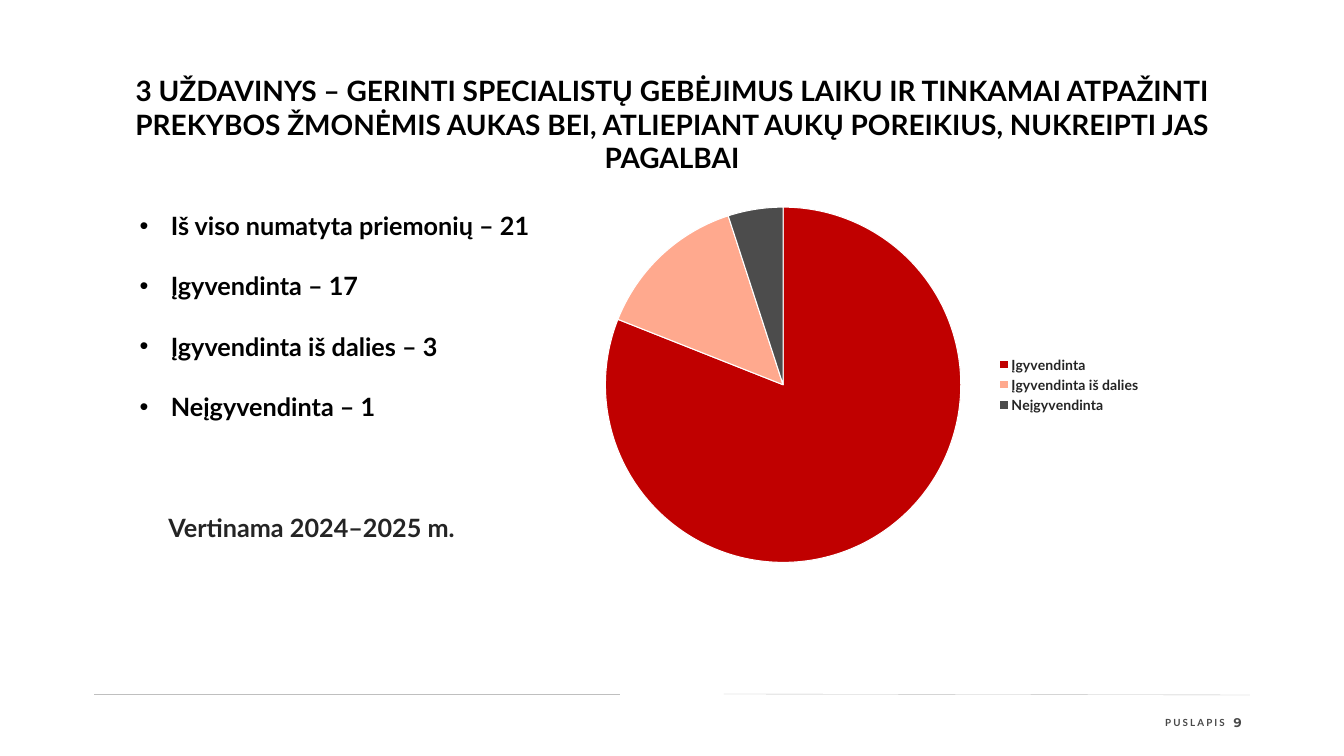
from lxml import etree
from pptx import Presentation
from pptx.chart.data import CategoryChartData
from pptx.dml.color import RGBColor
from pptx.enum.chart import XL_CHART_TYPE, XL_LEGEND_POSITION
from pptx.enum.shapes import MSO_CONNECTOR
from pptx.enum.text import MSO_ANCHOR, PP_ALIGN
from pptx.oxml import parse_xml
from pptx.oxml.ns import nsdecls, qn
from pptx.util import Inches, Pt

COLORS = {
    "title": "000000",
    "note": "242424",
    "footer": "494949",
    "rule": "BFBFBF",
    "border": "FFFFFF",
}
RESULTS = [
    ("Įgyvendinta", 81, "C00000"),
    ("Įgyvendinta iš dalies", 14, "FFA98E"),
    ("Neįgyvendinta", 5, "4C4C4C"),
]
MEASURES = [
    "Iš viso numatyta priemonių – 21",
    "Įgyvendinta – 17",
    "Įgyvendinta iš dalies – 3",
    "Neįgyvendinta – 1",
]
BODY_LINE = 43.2  # points, one line of 36 pt text

prs = Presentation()
prs.slide_width, prs.slide_height = Inches(26.66), Inches(15)
slide = prs.slides.add_slide(prs.slide_layouts[6])
col, row = prs.slide_width / 100, prs.slide_height / 100


def add_frame(left, top, width, height, margin=None, wrap=True):
    """Add a text box placed in grid columns and rows; return its text frame."""
    box = slide.shapes.add_textbox(
        int(left * col), int(top * row), int(width * col), int(height * row))
    frame = box.text_frame
    frame.word_wrap = wrap
    if margin is not None:
        frame.margin_left = frame.margin_right = Inches(margin * 2)
        frame.margin_top = frame.margin_bottom = Inches(margin)
    return frame


def style(font, size, color, name="Lato"):
    font.name, font.size, font.bold = name, Pt(size), True
    font.color.rgb = RGBColor.from_string(COLORS[color])


# Footer rules
for x1, y1, x2, y2 in [(7.01, 91.87, 46.14, 91.87), (53.86, 91.8, 92.99, 91.93)]:
    rule = slide.shapes.add_connector(
        MSO_CONNECTOR.STRAIGHT,
        int(x1 * col), int(y1 * row), int(x2 * col), int(y2 * row))
    rule.line.width = Pt(0.5)
    rule.line.color.rgb = RGBColor.from_string(COLORS["rule"])
    etree.SubElement(rule._element.spPr, qn("a:effectLst"))

# Page number and its label
number = add_frame(90.47, 93.87, 3.23, 3.33, margin=0.1, wrap=False).paragraphs[0]
number.text = "9"
number.alignment = PP_ALIGN.CENTER
style(number.font, 18, "footer", "Montserrat")

label_frame = add_frame(86.53, 94.73, 4.61, 1.6, margin=0, wrap=False)
label_frame.vertical_anchor = MSO_ANCHOR.MIDDLE
label = label_frame.paragraphs[0]
label.text = "PUSLAPIS"
label.alignment = PP_ALIGN.RIGHT
style(label.font, 14, "footer")
label.runs[0].font._element.set("spc", "300")

# Measures, then the evaluation note
body = add_frame(10.02, 27.47, 78.77, 45.13)
for i, measure in enumerate(MEASURES):
    item = body.paragraphs[0] if i == 0 else body.add_paragraph()
    item.text = measure
    if i:
        item.space_before = Pt(BODY_LINE)
    props = item._p.get_or_add_pPr()
    props.set("marL", str(Inches(0.62)))
    props.set("indent", str(-Inches(0.62)))
    props.append(parse_xml(f'<a:buFont {nsdecls("a")} typeface="Arial"/>'))
    props.append(parse_xml(f'<a:buChar {nsdecls("a")} char="•"/>'))
    style(item.font, 36, "title")

note = body.add_paragraph()
note.text = "Vertinama 2024–2025 m."
note.space_before = Pt(3 * BODY_LINE)
note._p.get_or_add_pPr().set("marL", str(Inches(0.57)))
style(note.font, 36, "note")

# Share of measures by result
data = CategoryChartData()
data.categories = [name for name, _, _ in RESULTS]
data.add_series("Series 1", [share for _, share, _ in RESULTS])
chart = slide.shapes.add_chart(
    XL_CHART_TYPE.PIE, int(41.3 * col), int(26.4 * row),
    int(44.07 * col), int(49 * row), data).chart
chart.has_title = False
chart.font.name, chart.font.size = "Lato", Pt(10)
chart.has_legend = True
chart.legend.position = XL_LEGEND_POSITION.RIGHT
chart.legend.include_in_layout = False
style(chart.legend.font, 20, "note")

pie = chart.plots[0]
pie.vary_by_categories = True
for i, (_, _, color) in enumerate(RESULTS):
    piece = pie.series[0].points[i].format
    piece.fill.solid()
    piece.fill.fore_color.rgb = RGBColor.from_string(color)
    piece.line.width = Pt(1.5)
    piece.line.color.rgb = RGBColor.from_string(COLORS["border"])

plot_area = chart._chartSpace.chart.plotArea
for old_layout in plot_area.findall(qn("c:layout")):
    plot_area.remove(old_layout)
layout = etree.Element(qn("c:layout"))
manual = etree.SubElement(layout, qn("c:manualLayout"))
for tag, value in [("layoutTarget", "inner"), ("xMode", "edge"), ("yMode", "edge"),
                   ("x", 0.085), ("y", 0.02), ("w", 0.6), ("h", 0.96)]:
    etree.SubElement(manual, qn(f"c:{tag}")).set("val", str(value))
plot_area.insert(0, layout)

# Title
title = add_frame(8.74, 9.4, 82.52, 14.13).paragraphs[0]
title.text = ("3 UŽDAVINYS – GERINTI SPECIALISTŲ GEBĖJIMUS LAIKU IR TINKAMAI ATPAŽINTI "
              "PREKYBOS ŽMONĖMIS AUKAS BEI, ATLIEPIANT AUKŲ POREIKIUS, NUKREIPTI JAS PAGALBAI")
title.alignment = PP_ALIGN.CENTER
style(title.font, 40, "title")

prs.save("out.pptx")
